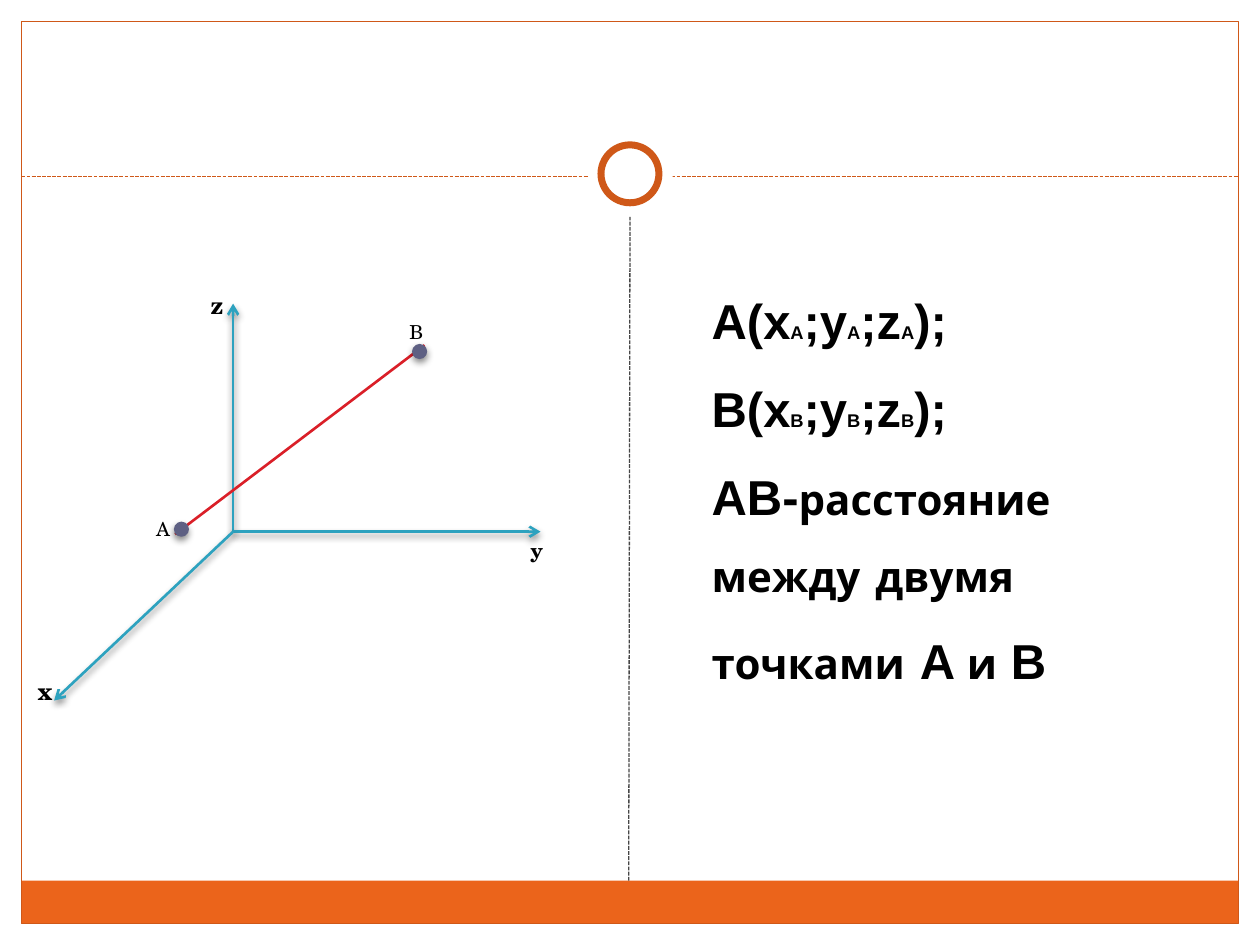
import pptx
import pptx.util
import pptx.dml.color
import pptx.enum.dml
import pptx.enum.shapes
import pptx.enum.text
import pptx.oxml
from pptx.util import Inches

SHAPE = pptx.enum.shapes.MSO_SHAPE
NS = 'xmlns:a="http://schemas.openxmlformats.org/drawingml/2006/main"'
SHADOW = (f'<a:effectLst {NS}><a:outerShdw blurRad="50800" dist="25400" dir="5400000" rotWithShape="0">'
          '<a:srgbClr val="000000"><a:alpha val="45000"/></a:srgbClr></a:outerShdw></a:effectLst>')


def rgb(color):
    return pptx.dml.color.RGBColor.from_string(color)


def add_line(start, end, color, width):
    s = shapes.add_connector(pptx.enum.shapes.MSO_CONNECTOR.STRAIGHT,
                             *[Inches(v) for v in start + end])
    s.line.color.rgb = rgb(color)
    s.line.width = pptx.util.Pt(width)
    return s


prs = pptx.Presentation()
prs.slide_width, prs.slide_height = Inches(10), Inches(7.5)
shapes = prs.slides.add_slide(prs.slide_layouts[6]).shapes

# Frame: bottom band and border
s = shapes.add_shape(SHAPE.RECTANGLE, Inches(0.17), Inches(6.99), Inches(9.66), Inches(0.34))
s.shadow.inherit = False
s.fill.solid()
s.fill.fore_color.rgb = rgb("EB641B")
s.line.fill.background()

s = shapes.add_shape(SHAPE.RECTANGLE, Inches(0.17), Inches(0.17), Inches(9.66), Inches(7.16))
s.shadow.inherit = False
s.fill.background()
s.line.color.rgb = rgb("CF5818")
s.line.width = pptx.util.Pt(0.75)

# Dashed dividers
for start, end, color in [((0.17, 1.4), (9.83, 1.4), "CF5818"),
                          ((4.99, 6.99), (5, 1.72), "464646")]:
    s = add_line(start, end, color, 0.75)
    s.line.dash_style = pptx.enum.dml.MSO_LINE.SQUARE_DOT
    s._element.spPr.append(pptx.oxml.parse_xml(f"<a:effectLst {NS}/>"))

# Ring: white disc that breaks the divider, then the outlined circle
for left, top, size, outlined in [(4.67, 1.05, 0.67, False), (4.77, 1.15, 0.46, True)]:
    s = shapes.add_shape(SHAPE.OVAL, Inches(left), Inches(top), Inches(size), Inches(size))
    s.shadow.inherit = False
    s.fill.solid()
    s.fill.fore_color.rgb = rgb("FFFFFF")
    if outlined:
        s.line.color.rgb = rgb("CF5818")
        s.line.width = pptx.util.Pt(4)
    else:
        s.line.fill.background()

# Coordinate axes z, y, x from the origin
for tip in [(1.85, 2.41), (4.29, 4.22), (0.43, 5.56)]:
    s = add_line((1.85, 4.22), tip, "2DA2BF", 1.5)
    s.line._get_or_add_ln().append(pptx.oxml.parse_xml(f'<a:tailEnd {NS} type="arrow"/>'))
    s._element.spPr.append(pptx.oxml.parse_xml(SHADOW))

# Segment AB
s = add_line((1.39, 4.24), (3.37, 2.74), "DA1F28", 1.5)
s._element.spPr.append(pptx.oxml.parse_xml(f"<a:effectLst {NS}/>"))

# Labels: text, left, top, width, height, left inset, size, bold
for text, left, top, width, height, inset, size, bold in [
    ("х", 0.2, 5.32, 0.24, 0.34, 0.1, 14, True),
    ("у", 4.21, 4.22, 0.08, 0.3, 0, 12, True),
    ("z", 1.61, 2.25, 0.16, 0.34, 0.06, 14, True),
    ("A", 1.14, 4.06, 0.31, 0.29, 0.1, 11, False),
    ("B", 3.19, 2.49, 0.16, 0.29, 0.06, 11, False),
]:
    s = shapes.add_textbox(Inches(left), Inches(top), Inches(width), Inches(height))
    tf = s.text_frame
    tf.word_wrap = False
    tf.margin_left, tf.margin_right = Inches(inset), 0
    r = tf.paragraphs[0].add_run()
    r.text = text
    r.font.name = "TeX Gyre Schola"
    r.font.size = pptx.util.Pt(size)
    r.font.bold = bold
    r.font.color.rgb = rgb("000000")

# Points B and A
for left, top in [(3.27, 2.73), (1.38, 4.14)]:
    s = shapes.add_shape(SHAPE.OVAL, Inches(left), Inches(top), Inches(0.12), Inches(0.12))
    s.fill.solid()
    s.fill.fore_color.rgb = rgb("5E6083")
    s.line.fill.background()
    s._element.spPr.append(pptx.oxml.parse_xml(SHADOW))

# Coordinates of both points and the definition of AB
LATIN, CYRILLIC, INDEX = ("Arial", 28), ("Comic Neue", 24), ("Arial", 10.5)
paragraphs = [
    [(f"{point}(x", LATIN), (point, INDEX), (";y", LATIN), (point, INDEX),
     (";z", LATIN), (point, INDEX), (");", LATIN)]
    for point in "AB"
]
paragraphs.append([("AB-", LATIN), ("расстояние между двумя точками ", CYRILLIC),
                   ("A ", LATIN), ("и", CYRILLIC), (" B", LATIN)])

s = shapes.add_textbox(Inches(5.55), Inches(2.02), Inches(3.54), Inches(3.53))
tf = s.text_frame
tf.word_wrap = True
tf.auto_size = pptx.enum.text.MSO_AUTO_SIZE.SHAPE_TO_FIT_TEXT
for i, runs in enumerate(paragraphs):
    p = tf.add_paragraph() if i else tf.paragraphs[0]
    p.line_spacing = 1.5
    for text, (font, size) in runs:
        r = p.add_run()
        r.text = text
        r.font.name = font
        r.font.size = pptx.util.Pt(size)
        r.font.bold = True
        r.font.color.rgb = rgb("000000")

prs.save("out.pptx")
